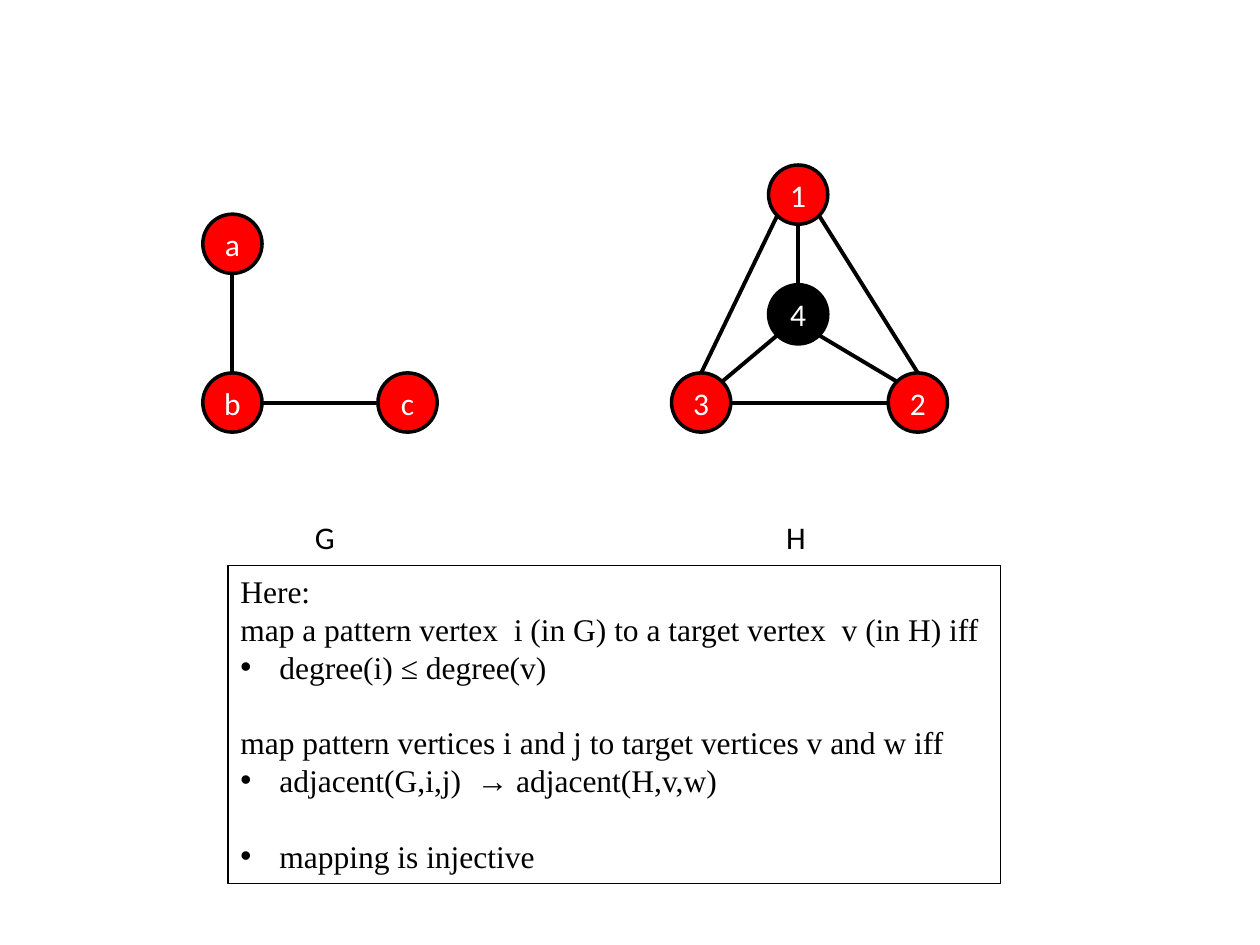
from math import cos, radians, sin

from lxml import etree
from pptx import Presentation
from pptx import util as u
from pptx.dml.color import RGBColor
from pptx.enum import shapes, text
from pptx.oxml import ns

COLOURS = {"node": "FF0000", "ink": "000000", "label": "FFFFFF"}
DIAMETER = 0.47
LINE_PITCH = u.Pt(21.6)
TOP, LEFT, BOTTOM, RIGHT = 270, 180, 90, 0
UPPER_LEFT, LOWER_LEFT, LOWER_RIGHT, UPPER_RIGHT = 225, 135, 45, 315

GRAPH_G = {
    "nodes": {"a": (0, 0, "node"), "b": (0, 1.26, "node"), "c": (1.39, 1.26, "node")},
    "edges": [("a", BOTTOM, "b", TOP), ("b", RIGHT, "c", LEFT)],
}
GRAPH_H = {
    "nodes": {
        "1": (0.77, 0, "node"),
        "3": (0, 1.65, "node"),
        "2": (1.72, 1.65, "node"),
        "4": (0.77, 0.95, "ink"),
    },
    "edges": [
        ("1", LOWER_LEFT, "3", TOP),
        ("3", RIGHT, "2", LEFT),
        ("1", LOWER_RIGHT, "2", TOP),
        ("1", BOTTOM, "4", TOP),
        ("4", LOWER_RIGHT, "2", UPPER_LEFT),
        ("3", UPPER_RIGHT, "4", LOWER_LEFT),
    ],
}
RULES = [
    ("Here:", False, False),
    ("map a pattern vertex  i (in G) to a target vertex  v (in H) iff", False, False),
    ("degree(i) ≤ degree(v)", True, False),
    ("map pattern vertices i and j to target vertices v and w iff", False, True),
    ("adjacent(G,i,j)  → adjacent(H,v,w)", True, False),
    ("mapping is injective", True, True),
]


def colour(name):
    """Return the named colour."""
    return RGBColor.from_string(COLOURS[name])


def style_text(para, font, ink):
    """Format every run of a paragraph."""
    for span in para.runs:
        span.font.name = font
        span.font.size = u.Pt(18)
        span.font.color.rgb = colour(ink)


def add_node(page, left, top, label, fill):
    """Draw one labelled vertex."""
    node = page.shapes.add_shape(
        shapes.MSO_SHAPE.OVAL, *map(u.Inches, (left, top, DIAMETER, DIAMETER))
    )
    node.shadow.inherit = False
    node.fill.solid()
    node.fill.fore_color.rgb = colour(fill)
    node.line.color.rgb = colour("ink")
    node.line.width = u.Pt(2)
    frame = node.text_frame
    frame.text = label
    frame.word_wrap = False
    frame.vertical_anchor = text.MSO_ANCHOR.MIDDLE
    frame.paragraphs[0].alignment = text.PP_ALIGN.CENTER
    style_text(frame.paragraphs[0], "Calibri", "label")


def rim_point(left, top, angle):
    """Return the point of a vertex's rim at a clockwise angle."""
    radius = DIAMETER / 2
    turn = radians(angle)
    return u.Inches(left + radius * (1 + cos(turn))), u.Inches(top + radius * (1 + sin(turn)))


def add_edge(page, start, end):
    """Draw one edge between two points."""
    edge = page.shapes.add_connector(shapes.MSO_CONNECTOR.STRAIGHT, *start, *end)
    edge.line.color.rgb = colour("ink")
    edge.line.width = u.Pt(2.25)
    etree.SubElement(edge._element.spPr, ns.qn("a:effectLst"))


def add_graph(page, left, top, graph):
    """Draw a graph with its corner at the given place."""
    places = {name: (left + x, top + y) for name, (x, y, _) in graph["nodes"].items()}
    for name, (_, _, fill) in graph["nodes"].items():
        add_node(page, *places[name], name, fill)
    for first, leave, second, arrive in graph["edges"]:
        add_edge(page, rim_point(*places[first], leave), rim_point(*places[second], arrive))


def add_caption(page, left, top, name):
    """Write the name of a graph."""
    box = page.shapes.add_textbox(*map(u.Inches, (left, top, 0.36, 0.4)))
    box.text_frame.text = name
    box.text_frame.word_wrap = False
    style_text(box.text_frame.paragraphs[0], "Calibri", "ink")


def add_bullet(para):
    """Give a paragraph a hanging bullet."""
    props = para._p.get_or_add_pPr()
    props.set("marL", str(u.Inches(0.31)))
    props.set("indent", str(-u.Inches(0.31)))
    etree.SubElement(props, ns.qn("a:buFont"), typeface="Arial")
    etree.SubElement(props, ns.qn("a:buChar"), char="•")


def add_rules(page, left, top, width, height):
    """Write the framed mapping rules."""
    box = page.shapes.add_textbox(*map(u.Inches, (left, top, width, height)))
    box.line.color.rgb = colour("ink")
    box.line.width = u.Pt(0.75)
    frame = box.text_frame
    frame.word_wrap = False
    frame.text = "\n".join(rule for rule, _, _ in RULES)
    for para, (_, bulleted, spaced) in zip(frame.paragraphs, RULES):
        para.line_spacing = LINE_PITCH
        para.space_before = LINE_PITCH if spaced else u.Pt(0)
        if bulleted:
            add_bullet(para)
        style_text(para, "Times New Roman", "ink")


def main():
    """Build and save the deck."""
    deck = Presentation()
    deck.slide_width, deck.slide_height = u.Inches(10), u.Inches(7.5)
    page = deck.slides.add_slide(deck.slide_layouts[6])
    add_graph(page, 1.61, 1.7, GRAPH_G)
    add_graph(page, 5.33, 1.31, GRAPH_H)
    add_caption(page, 2.4, 4.06, "G")
    add_caption(page, 6.14, 4.06, "H")
    add_rules(page, 1.81, 4.49, 6.13, 2.52)
    deck.save("out.pptx")


if __name__ == "__main__":
    main()
